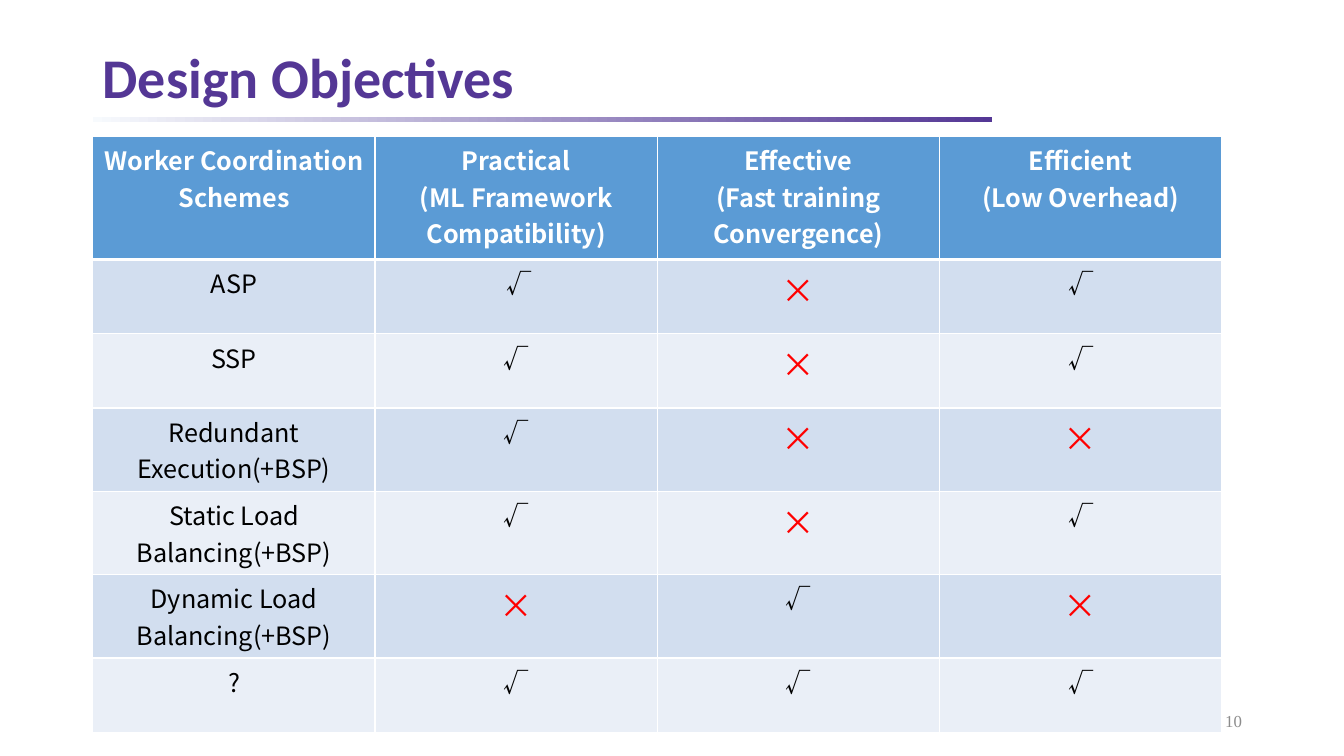
from lxml.etree import SubElement as Sub
from pptx import Presentation
from pptx.dml.color import RGBColor as Rgb
from pptx.enum.shapes import MSO_SHAPE as Shape
from pptx.enum.text import MSO_ANCHOR as Anchor, PP_ALIGN as Align
from pptx.oxml import parse_xml
from pptx.oxml.ns import nsdecls, qn
from pptx.util import Cm, Pt

HUES = {"title": "543795", "pale": "F7FAFD", "head": "5B9BD5", "odd": "D2DEEF",
        "even": "EAEFF7", "white": "FFFFFF", "black": "000000", "red": "FF0000",
        "grey": "8C8C8C"}
SANS, MARK = "Noto Sans CJK SC", "Noto Sans CJK JP"
HEADS = ["Worker Coordination Schemes", "Practical\n(ML Framework Compatibility)",
         "Effective\n(Fast training Convergence)", "Efficient\n(Low Overhead)"]
ROWS = [["ASP", " √", "×", "√"],
        ["SSP", "√", "×", "√"],
        ["Redundant Execution(+BSP)", "√", "×", "×"],
        ["Static Load Balancing(+BSP)", "√", "×", "√"],
        ["Dynamic Load Balancing(+BSP)", "×", "√", "×"],
        ["?", "√", "√", "√"]]


def hue(name):
    """Return the named colour."""
    return Rgb.from_string(HUES[name])


def put(frame, text, size=18, face=SANS, color="black", bold=False,
        align=Align.CENTER, lead=None):
    """Write each line of text as a formatted paragraph."""
    for i, line in enumerate(text.split("\n")):
        para = frame.add_paragraph() if i else frame.paragraphs[0]
        para.alignment = align
        if lead:
            para.line_spacing = lead
        run = para.add_run()
        run.text = line
        font = run.font
        font.size, font.name, font.bold = Pt(size), face, bold
        font.color.rgb = hue(color)
        Sub(font._element, qn("a:ea")).set("typeface", face)


def label(slide, text, left, top, width, height, **style):
    """Add a text box centred on its height."""
    frame = slide.shapes.add_textbox(left, top, width, height).text_frame
    frame.word_wrap = True
    frame.vertical_anchor = Anchor.MIDDLE
    put(frame, text, **style)


def title(slide, left, top, width, height):
    """Place the heading over its fading rule."""
    rule = slide.shapes.add_shape(Shape.RECTANGLE, left, top + height - Cm(0.04),
                                  Cm(22.66), Cm(0.13))
    rule.shadow.inherit = False
    rule.line.fill.background()
    rule.fill.gradient()
    rule.fill.gradient_angle = 0
    for stop, name in zip(rule.fill.gradient_stops, ("pale", "title")):
        stop.color.rgb = hue(name)
    label(slide, "Design Objectives", left, top, width, height, size=40,
          face="Calibri", color="title", bold=True, align=Align.LEFT, lead=0.9)


def edge(cell, base):
    """Draw white borders, the lower one with the given width."""
    props = cell._tc.get_or_add_tcPr()
    for i, (side, width) in enumerate(zip("LRTB", (1, 1, 1, base))):
        props.insert(i, parse_xml(
            f'<a:ln{side} {nsdecls("a")} w="{Pt(width)}"><a:solidFill>'
            f'<a:srgbClr val="{HUES["white"]}"/></a:solidFill></a:ln{side}>'))


def grid(slide, left, top, width, head, step, tall):
    """Place the table that rates each scheme, with tall rows for long names."""
    data = [HEADS] + ROWS
    sizes = [head] + [tall if " " in row[0] else step for row in ROWS]
    table = slide.shapes.add_table(len(data), len(HEADS), left, top, width,
                                   sum(sizes)).table
    table.first_row = table.horz_banding = False
    for r, texts in enumerate(data):
        table.rows[r].height = sizes[r]
        for c, text in enumerate(texts):
            cell = table.cell(r, c)
            cell.fill.solid()
            cell.fill.fore_color.rgb = hue(("even", "odd")[r % 2] if r else "head")
            edge(cell, 1 if r else 3)
            if not r:
                style = dict(color="white", bold=True)
            elif text == "×":
                style = dict(color="red", size=24)
            else:
                style = dict(face=MARK if "√" in text else SANS)
            put(cell.text_frame, text, **style)


def main():
    """Build and save the slide."""
    deck = Presentation()
    deck.slide_width, deck.slide_height = Cm(33.87), Cm(19.05)
    slide = deck.slides.add_slide(deck.slide_layouts[6])
    left = Cm(2.34)
    title(slide, left, Cm(1.07), Cm(29.21), Cm(1.92))
    label(slide, "10", Cm(23.93), Cm(17.65), Cm(7.62), Cm(1.02), size=12,
          face="Times New Roman", color="grey", align=Align.RIGHT)
    grid(slide, left, Cm(3.44), Cm(28.45), Cm(3.1), Cm(1.87), Cm(2.1))
    deck.save("out.pptx")


if __name__ == "__main__":
    main()
